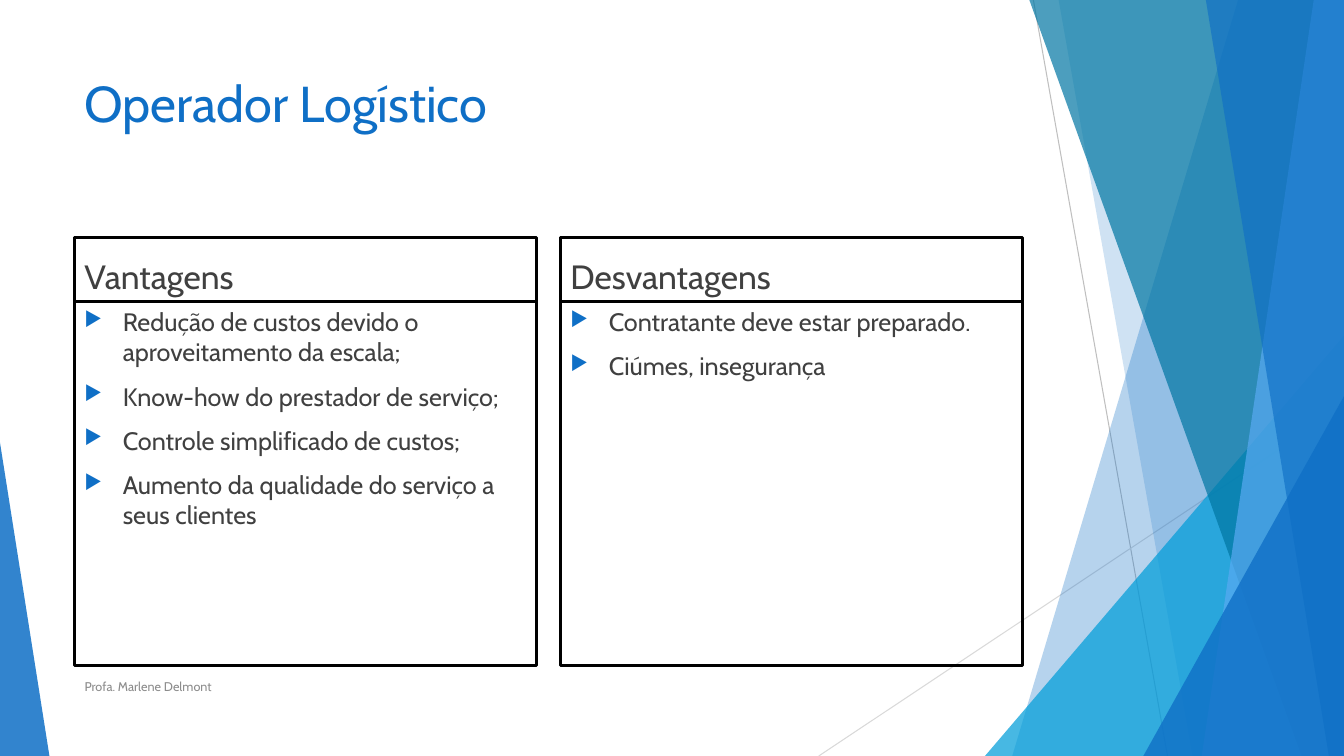
from pptx import Presentation, util as u
from pptx.dml.color import RGBColor
from pptx.enum import shapes, text
from pptx.oxml import ns
from lxml import etree

WIDTH, HEIGHT = u.Inches(13.33), u.Inches(7.5)
FONT = "Cabin"
BLUE = RGBColor(0x0F, 0x6F, 0xC6)
CYAN = RGBColor(0x00, 0x9D, 0xD9)
TEAL = RGBColor(0x00, 0x76, 0xA3)
SKY = RGBColor(0x59, 0xAA, 0xF2)
BLACK = RGBColor(0, 0, 0)
INK = RGBColor(0x40, 0x40, 0x40)
FOOTER_GRAY = RGBColor(0x8C, 0x8C, 0x8C)
RAY_GRAY = RGBColor(0xBF, 0xBF, 0xBF)
PALE_GRAY = RGBColor(0xD9, 0xD9, 0xD9)

LEFT = 5.55
PANEL_WIDTH, PANEL_STEP = 34.36, 36.16
HEADING_TOP, HEADING_HEIGHT = 31.47, 8.4
BODY_HEIGHT = 48.13

PANELS = [
    ("Vantagens", [
        "Redução de custos devido o aproveitamento da escala;",
        "Know-how do prestador de serviço;",
        "Controle simplificado de custos;",
        "Aumento da qualidade do serviço a seus clientes",
    ]),
    ("Desvantagens", [
        "Contratante deve estar preparado.",
        "Ciúmes, insegurança",
    ]),
]


def across(percent):
    return round(WIDTH * percent / 100)


def down(percent):
    return round(HEIGHT * percent / 100)


def area(left, top, width, height):
    return across(left), down(top), across(width), down(height)


def tint(facet, color, opacity):
    facet.shadow.inherit = False
    facet.line.fill.background()
    facet.fill.solid()
    facet.fill.fore_color.rgb = color
    solid = facet._element.spPr.find(ns.qn("a:solidFill"))
    etree.SubElement(solid[0], ns.qn("a:alpha"), val=str(opacity * 1000))


def add_ray(slide, start, end, color):
    ray = slide.shapes.add_connector(
        shapes.MSO_CONNECTOR.STRAIGHT,
        across(start[0]), down(start[1]), across(end[0]), down(end[1]))
    ray.line.color.rgb = color
    ray.line.width = u.Pt(0.75)
    etree.SubElement(ray._element.spPr, ns.qn("a:effectLst"))


def add_band(slide, top_left, bottom_left, color, opacity):
    outline = slide.shapes.build_freeform(across(top_left), 0)
    outline.add_line_segments(
        [(WIDTH, 0), (WIDTH, HEIGHT), (across(bottom_left), HEIGHT)])
    tint(outline.convert_to_shape(), color, opacity)


def add_corner(slide, left, top, width, apex, color, opacity):
    corner = slide.shapes.add_shape(
        shapes.MSO_SHAPE.ISOSCELES_TRIANGLE, *area(left, top, width, 100 - top))
    corner.adjustments[0] = apex
    tint(corner, color, opacity)


def add_bullet(paragraph):
    properties = paragraph._p.get_or_add_pPr()
    properties.set("marL", str(u.Inches(0.38)))
    properties.set("indent", str(-u.Inches(0.38)))
    bullet_color = etree.SubElement(properties, ns.qn("a:buClr"))
    etree.SubElement(bullet_color, ns.qn("a:srgbClr"), val=str(BLUE))
    etree.SubElement(properties, ns.qn("a:buSzPct"), val="80000")
    etree.SubElement(properties, ns.qn("a:buChar"), char="▶")


def write(holder, lines, size, color, anchor=text.MSO_ANCHOR.TOP,
          before=0, bulleted=False):
    frame = holder.text_frame
    frame.word_wrap = True
    frame.vertical_anchor = anchor
    frame.text = "\n".join(lines)
    for paragraph in frame.paragraphs:
        paragraph.alignment = text.PP_ALIGN.LEFT
        paragraph.space_before = u.Pt(before)
        paragraph.font.name = FONT
        paragraph.font.size = u.Pt(size)
        paragraph.font.color.rgb = color
        if bulleted:
            add_bullet(paragraph)


def add_frame(slide, place):
    frame = slide.shapes.add_shape(shapes.MSO_SHAPE.RECTANGLE, *area(*place))
    frame.shadow.inherit = False
    frame.fill.background()
    frame.line.color.rgb = BLACK
    frame.line.width = u.Pt(2.25)
    return frame


def add_panel(slide, column, heading, points):
    left = LEFT + column * PANEL_STEP
    header = add_frame(slide, (left, HEADING_TOP, PANEL_WIDTH, HEADING_HEIGHT))
    write(header, [heading], 24, INK, text.MSO_ANCHOR.BOTTOM, before=10)
    body = add_frame(
        slide, (left, HEADING_TOP + HEADING_HEIGHT, PANEL_WIDTH, BODY_HEIGHT))
    write(body, points, 18, INK, before=10, bulleted=True)


def add_backdrop(slide):
    add_ray(slide, (76.89, 0), (86.87, 100), RAY_GRAY)
    add_ray(slide, (100, 53.73), (60.92, 100), PALE_GRAY)
    add_band(slide, 92.12, 75.32, BLUE, 30)
    add_band(slide, 78.77, 88.75, BLUE, 20)
    add_corner(slide, 73.29, 44.4, 26.71, 1, CYAN, 72)
    add_band(slide, 76.59, 96.85, TEAL, 70)
    add_band(slide, 97.75, 89.42, SKY, 70)
    add_band(slide, 89.72, 98.87, BLUE, 65)
    add_corner(slide, 85.07, 52.4, 14.93, 1, BLUE, 80)
    add_corner(slide, 0, 58.53, 3.68, 0, BLUE, 85)


def main():
    deck = Presentation()
    deck.slide_width, deck.slide_height = WIDTH, HEIGHT
    slide = deck.slides.add_slide(deck.slide_layouts[6])
    add_backdrop(slide)
    title = slide.shapes.add_textbox(*area(LEFT, 8.93, 70.52, 19.2))
    write(title, ["Operador Logístico"], 36, BLUE)
    for column, (heading, points) in enumerate(PANELS):
        add_panel(slide, column, heading, points)
    footer = slide.shapes.add_textbox(*area(LEFT, 88.13, 51.69, 5.33))
    write(footer, ["Profa. Marlene Delmont"], 9, FOOTER_GRAY,
          text.MSO_ANCHOR.MIDDLE)
    deck.save("out.pptx")


if __name__ == "__main__":
    main()
